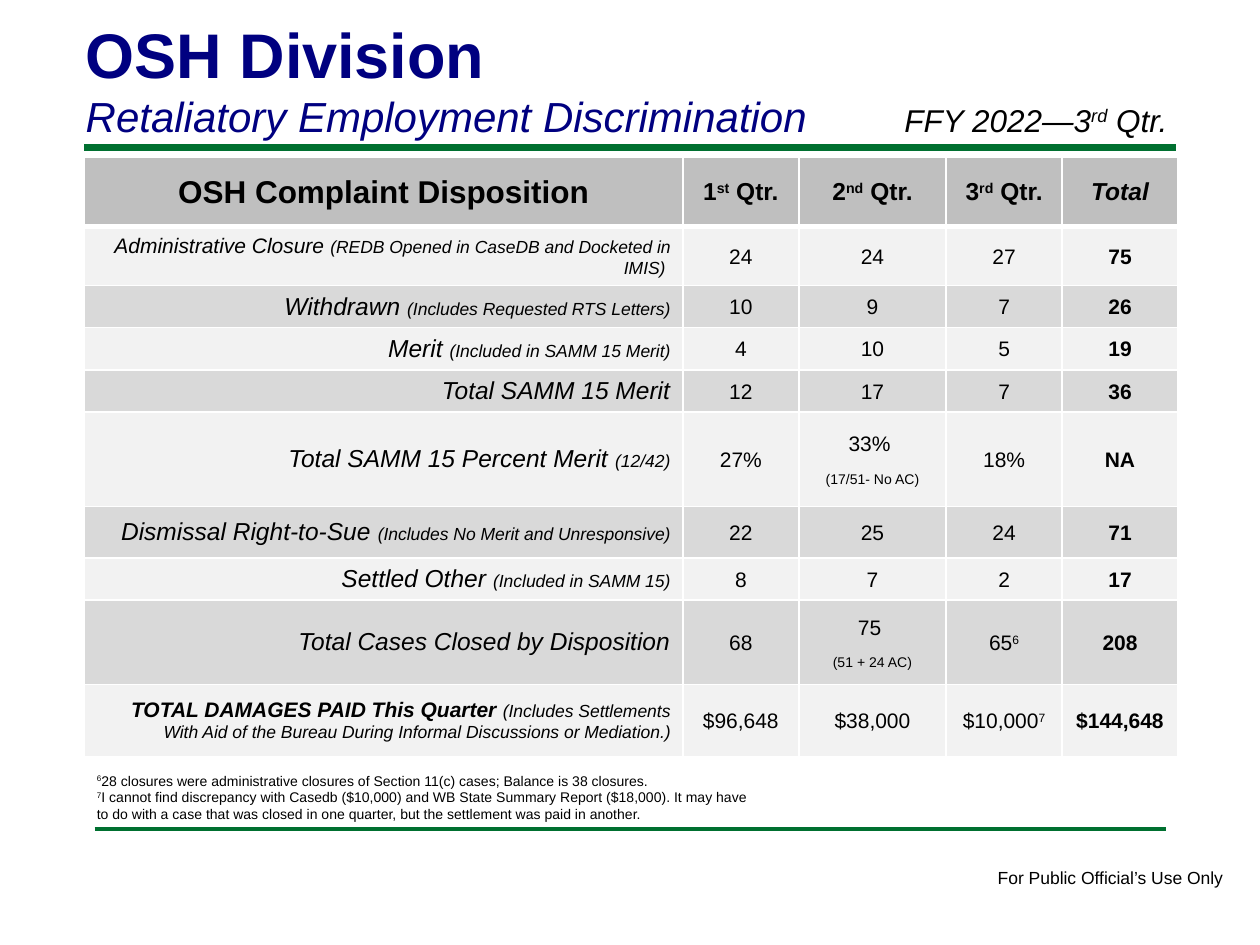
from lxml.etree import SubElement
from pptx import Presentation
from pptx.dml.color import RGBColor
from pptx.enum.shapes import MSO_CONNECTOR as Conn
from pptx.enum.text import MSO_ANCHOR as Anchor, MSO_AUTO_SIZE as Auto, PP_ALIGN as Align
from pptx.oxml.ns import qn
from pptx.util import Inches as In, Pt

# Content: ^ marks superscript; a paragraph is a list of (text, format) runs
BIG, NOTE, SMALL = {"size": 14}, {"size": 10}, {"size": 8}
TITLE = [[("OSH Division", {"size": 36, "bold": True})],
         [("Retaliatory Employment Discrimination", {"size": 24, "italic": True})]]
PERIOD = "FFY 2022—3^rd^ Qtr."
HEADS = ["OSH Complaint Disposition", "1^st^ Qtr.", "2^nd^ Qtr.", "3^rd^ Qtr.", "Total"]
ROWS = [  # height, label, label format, note, values
    (0.43, "Administrative Closure ", {}, "(REDB Opened in CaseDB and Docketed in IMIS) ",
     ["24", "24", "27", "75"]),
    (0.3, "Withdrawn ", BIG, "(Includes Requested RTS Letters)", ["10", "9", "7", "26"]),
    (0.3, "Merit ", BIG, "(Included in SAMM 15 Merit)", ["4", "10", "5", "19"]),
    (0.3, "Total SAMM 15 Merit", BIG, "", ["12", "17", "7", "36"]),
    (0.75, "Total SAMM 15 Percent Merit ", BIG, "(12/42)",
     ["27%", ("33% ", "(17/51- No AC)"), "18%", "NA"]),
    (0.41, "Dismissal Right-to-Sue ", BIG, "(Includes No Merit and Unresponsive)",
     ["22", "25", "24", "71"]),
    (0.31, "Settled Other ", BIG, "(Included in SAMM 15)", ["8", "7", "2", "17"]),
    (0.67, "Total Cases Closed by Disposition", BIG, "",
     ["68", ("75 ", "(51 + 24 AC)"), "65^6^", "208"]),
    (0.57, "TOTAL DAMAGES PAID This Quarter ", {"bold": True},
     "(Includes Settlements With Aid of the Bureau During Informal Discussions or Mediation.)",
     ["$96,648", "$38,000", "$10,000^7^", "$144,648"]),
]
FOOTNOTES = [
    "^6^28 closures were administrative closures of Section 11(c) cases; "
    "Balance is 38 closures.",
    "^7^I cannot find discrepancy with Casedb ($10,000) and WB State Summary Report "
    "($18,000). It may have to do with a case that was closed in one quarter, "
    "but the settlement was paid in another."]
FOOTER = "For Public Official’s Use Only"

WIDTHS = [4.75, 0.92, 1.17, 0.92, 0.92]
HEAD_H = 0.55
EDGE = 0.67
GREEN, NAVY, WHITE = "007030", "000080", "FFFFFF"
GREY, BANDS = "BFBFBF", ("F2F2F2", "D9D9D9")


def rgb(code):
    return RGBColor.from_string(code)


def write(frame, paras, align=Align.LEFT, line=None, after=0, **base):
    """Fill a text frame; each paragraph is a string or a list of runs."""
    for num, runs in enumerate(paras):
        para = frame.paragraphs[0] if num == 0 else frame.add_paragraph()
        para.alignment = align
        if line:
            para.line_spacing = line
            para.space_after = Pt(after)
        for text, own in ([(runs, {})] if isinstance(runs, str) else runs):
            look = {"size": 12, "bold": False, "italic": False, "color": "000000",
                    **base, **own}
            for part, piece in enumerate(text.split("^")):
                if not piece:
                    continue
                run = para.add_run()
                run.text = piece
                font = run.font
                font.name, font.size = "Arial", Pt(look["size"])
                font.bold, font.italic = look["bold"], look["italic"]
                font.color.rgb = rgb(look["color"])
                if part % 2:
                    run._r.get_or_add_rPr().set("baseline", "30000")


def box(slide, area, paras, wrap=True, **look):
    frame = slide.shapes.add_textbox(*map(In, area)).text_frame
    frame.word_wrap = wrap
    frame.auto_size = Auto.SHAPE_TO_FIT_TEXT
    write(frame, paras, **look)


def rule(slide, left, top, width):
    """Green line with equal margins on both sides."""
    bar = slide.shapes.add_connector(Conn.STRAIGHT, In(left), In(top), In(10 - left), In(top))
    bar.line.color.rgb = rgb(GREEN)
    bar.line.width = Pt(width)
    SubElement(bar._element.spPr, qn("a:effectLst"))


def dress(cell, color, base):
    """Fill, middle anchor and white borders."""
    cell.fill.solid()
    cell.fill.fore_color.rgb = rgb(color)
    cell.vertical_anchor = Anchor.MIDDLE
    props = cell._tc.get_or_add_tcPr()
    for num, side in enumerate("LRTB"):
        edge = SubElement(props, qn("a:ln" + side), w=str(Pt(base if side == "B" else 1)))
        SubElement(SubElement(edge, qn("a:solidFill")), qn("a:srgbClr"), val=WHITE)
        props.insert(num, edge)


def fill_table(slide):
    grid = slide.shapes.add_table(len(ROWS) + 1, len(HEADS), In(EDGE), In(1.25),
                                  In(sum(WIDTHS)), In(4.75)).table
    for col, width in zip(grid.columns, WIDTHS):
        col.width = In(width)
    for row, high in zip(grid.rows, [HEAD_H] + [entry[0] for entry in ROWS]):
        row.height = In(high)

    # Heading row
    for col, head in enumerate(HEADS):
        cell = grid.cell(0, col)
        dress(cell, GREY, 3)
        write(cell.text_frame, [head], align=Align.CENTER, size=14 if col else 18,
              bold=True, italic=head == "Total")

    # Banded body rows
    for num, (_, label, look, note, values) in enumerate(ROWS):
        for col in range(len(HEADS)):
            cell = grid.cell(num + 1, col)
            dress(cell, BANDS[num % 2], 1)
            if col == 0:
                write(cell.text_frame, [[(label, look), (note, NOTE)]],
                      align=Align.RIGHT, italic=True)
                continue
            value = values[col - 1]
            paras = [value] if isinstance(value, str) else [value[0], [(value[1], SMALL)]]
            write(cell.text_frame, paras, align=Align.CENTER, line=1.07, after=8,
                  bold=col == len(values))


def main():
    deck = Presentation()
    deck.slide_width, deck.slide_height = In(10), In(7.5)
    slide = deck.slides.add_slide(deck.slide_layouts[5])

    # Title and period
    title = slide.shapes.title
    title.left, title.top, title.width, title.height = map(In, (0.58, 0.06, 8.25, 1.11))
    title.text_frame.auto_size = Auto.NONE
    title.text_frame.vertical_anchor = Anchor.BOTTOM
    write(title.text_frame, TITLE, color=NAVY)
    box(slide, (7.08, 0.75, 2.5, 0.4), [PERIOD], size=18, italic=True)

    # Rules, table and notes
    rule(slide, EDGE, 1.17, 4)
    rule(slide, 0.75, 6.58, 2)
    fill_table(slide)
    box(slide, (EDGE, 6.08, 5.42, 0.67), FOOTNOTES, size=8)
    box(slide, (7.82, 6.83, 2.01, 0.27), [FOOTER], wrap=False, size=10)
    deck.save("out.pptx")


if __name__ == "__main__":
    main()
